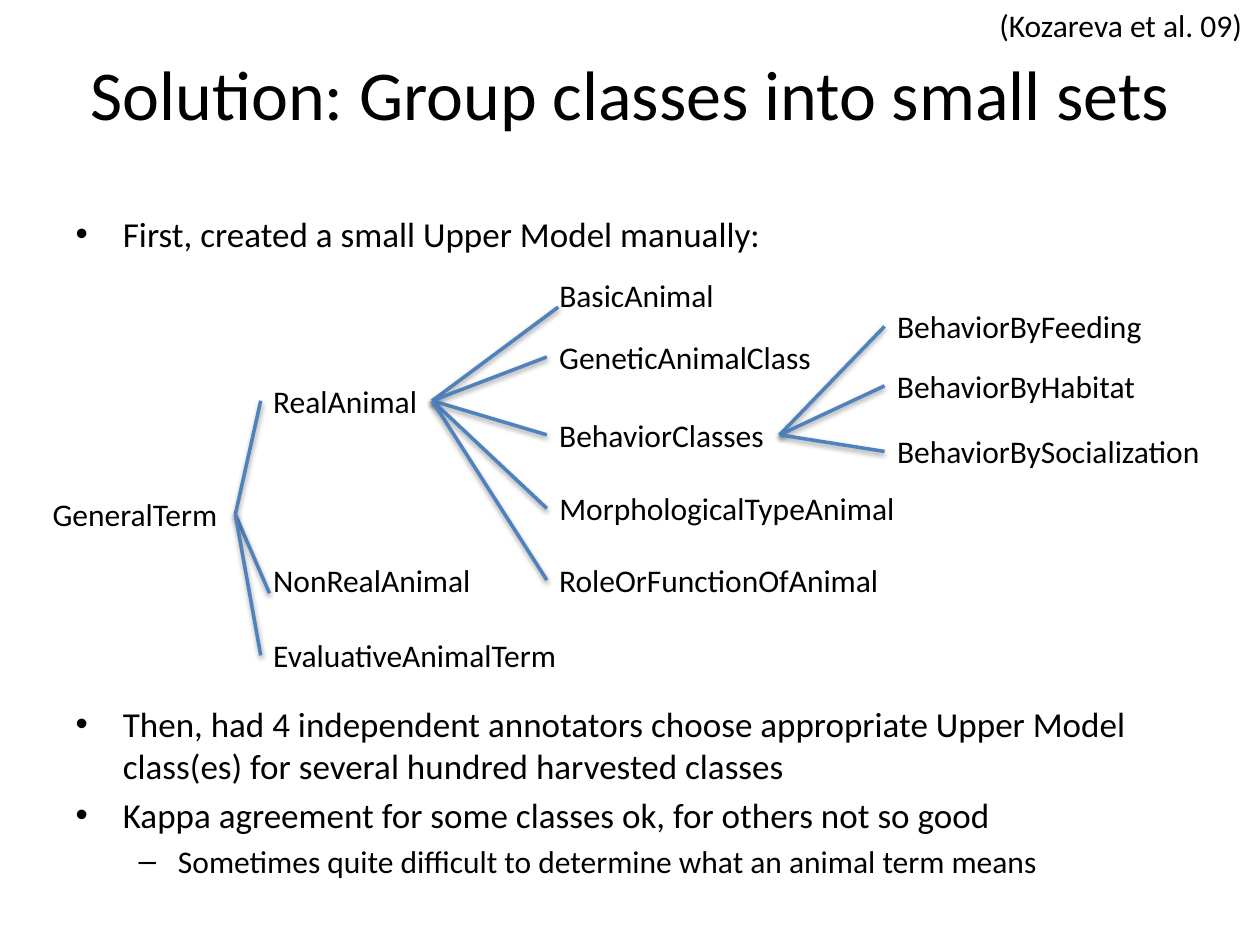
from dataclasses import dataclass
from pptx import Presentation
from pptx.dml.color import RGBColor
from pptx.enum.shapes import MSO_CONNECTOR
from pptx.enum.text import MSO_ANCHOR, MSO_AUTO_SIZE, PP_ALIGN
from pptx.util import Pt


@dataclass
class Theme:
    font: str = "Calibri"
    ink: RGBColor = RGBColor(0, 0, 0)
    blue: RGBColor = RGBColor(0x4F, 0x81, 0xBD)
    title: int = 40
    body: int = 20
    small: int = 18


theme = Theme()


def add_run(para, text, size):
    run = para.add_run()
    run.text = text
    run.font.name = theme.font
    run.font.size = Pt(size)
    run.font.color.rgb = theme.ink


def add_label(shapes, text, left, top, width):
    box = shapes.add_textbox(Pt(left), Pt(top), Pt(width), Pt(29))
    frame = box.text_frame
    frame.word_wrap = False
    frame.auto_size = MSO_AUTO_SIZE.SHAPE_TO_FIT_TEXT
    add_run(frame.paragraphs[0], text, theme.small)


deck = Presentation()
deck.slide_width, deck.slide_height = Pt(720), Pt(540)
slide = deck.slides.add_slide(deck.slide_layouts[1])

title = slide.shapes.title
title.left, title.top, title.width, title.height = Pt(36), Pt(13.7), Pt(648), Pt(78.5)
title.text_frame.vertical_anchor = MSO_ANCHOR.MIDDLE
head = title.text_frame.paragraphs[0]
head.alignment = PP_ALIGN.CENTER
add_run(head, "Solution: Group classes into small sets", theme.title)

body = slide.placeholders[1]
body.left, body.top, body.width, body.height = Pt(36), Pt(118), Pt(648), Pt(400)
frame = body.text_frame
frame.auto_size = MSO_AUTO_SIZE.NONE
tree_gap = 256
points = [
    ("First, created a small Upper Model manually:", 0, theme.body, None),
    ("Then, had 4 independent annotators choose appropriate Upper Model "
     "class(es) for several hundred harvested classes", 0, theme.body, tree_gap),
    ("Kappa agreement for some classes ok, for others not so good", 0, theme.body, None),
    ("Sometimes quite difficult to determine what an animal term means", 1, theme.small, None),
]
for index, (text, level, size, gap) in enumerate(points):
    para = frame.add_paragraph() if index else frame.paragraphs[0]
    para.level = level
    if gap:
        para.space_before = Pt(gap)
    add_run(para, text, size)

columns = [23, 149, 312.5, 505.5]
nodes = {
    "GeneralTerm": (0, 279.5, 111.5),
    "RealAnimal": (1, 214.5, 98),
    "NonRealAnimal": (1, 317, 129),
    "EvaluativeAnimalTerm": (1, 360, 181),
    "BasicAnimal": (2, 154, 104),
    "GeneticAnimalClass": (2, 189.5, 160),
    "BehaviorClasses": (2, 234, 133),
    "MorphologicalTypeAnimal": (2, 276, 209),
    "RoleOrFunctionOfAnimal": (2, 317, 199.5),
    "BehaviorByFeeding": (3, 172, 156),
    "BehaviorByHabitat": (3, 206, 152.5),
    "BehaviorBySocialization": (3, 243.5, 190),
}
branches = {
    "GeneralTerm": ["RealAnimal", "NonRealAnimal", "EvaluativeAnimalTerm"],
    "RealAnimal": ["BasicAnimal", "GeneticAnimalClass", "BehaviorClasses",
                   "MorphologicalTypeAnimal", "RoleOrFunctionOfAnimal"],
    "BehaviorClasses": ["BehaviorByFeeding", "BehaviorByHabitat", "BehaviorBySocialization"],
}
nudges = {"BasicAnimal": (6.5, 7), "NonRealAnimal": (5, 7.5)}
middle = 14.5

tree = slide.shapes.add_group_shape().shapes
for name, (column, top, width) in nodes.items():
    add_label(tree, name, columns[column], top, width)

for parent, children in branches.items():
    column, top, width = nodes[parent]
    start = Pt(columns[column] + width), Pt(top + middle)
    for child in children:
        column, top, width = nodes[child]
        right, down = nudges.get(child, (0, 0))
        end = Pt(columns[column] + right), Pt(top + middle + down)
        line = tree.add_connector(MSO_CONNECTOR.STRAIGHT, *start, *end)
        line.line.color.rgb = theme.blue
        line.line.width = Pt(2)

add_label(slide.shapes, "(Kozareva et al. 09)", 564, 0, 156)

deck.save("out.pptx")
